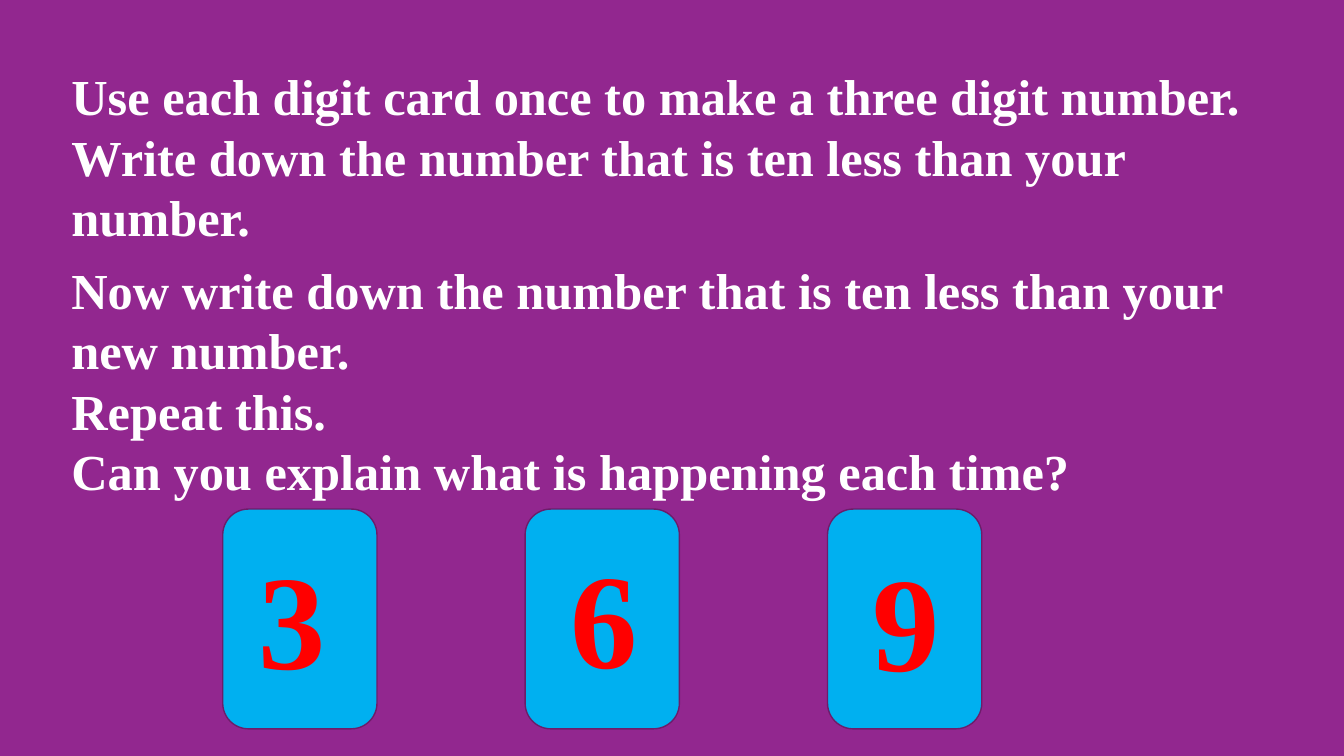
from pptx import Presentation
from pptx.dml.color import RGBColor
from pptx.enum import shapes, text
from pptx.util import Pt

COLOURS = {
    "background": "92278F",
    "instruction": "FFFFFF",
    "card": "00B0F0",
    "card_edge": "6C1D6A",
    "digit": "FF0000",
}
FONT = "Times New Roman"

INSTRUCTIONS = [
    (43.2, 138.2, [
        "Use each digit card once to make a three digit number.",
        "Write down the number that is ten less than your number.",
    ]),
    (181.4, 181.4, [
        "Now write down the number that is ten less than your new number.",
        "Repeat this.",
        "Can you explain what is happening each time?",
    ]),
]

# Digit, then left, top and width of its text
DIGITS = [
    ("3", 177.8, 378.7, 74.2),
    ("6", 400.3, 378, 59.8),
    ("9", 616.3, 380.2, 59.8),
]
FIRST_CARD_LEFT, CARD_TOP, CARD_STEP = 159.1, 363.6, 216
CARD_WIDTH, CARD_HEIGHT = 110.2, 157


def colour(name):
    return RGBColor.from_string(COLOURS[name])


def add_text(page, lines, left, top, width, height, size, colour_name, wrap=True):
    box = page.shapes.add_textbox(Pt(left), Pt(top), Pt(width), Pt(height))
    frame = box.text_frame
    frame.word_wrap = wrap
    frame.auto_size = text.MSO_AUTO_SIZE.SHAPE_TO_FIT_TEXT
    frame.text = "\n".join(lines)
    for para in frame.paragraphs:
        for span in para.runs:
            span.font.name = FONT
            span.font.size = Pt(size)
            span.font.bold = True
            span.font.color.rgb = colour(colour_name)


def add_card(page, left):
    card = page.shapes.add_shape(
        shapes.MSO_SHAPE.ROUNDED_RECTANGLE,
        Pt(left), Pt(CARD_TOP), Pt(CARD_WIDTH), Pt(CARD_HEIGHT))
    card.shadow.inherit = False
    card.fill.solid()
    card.fill.fore_color.rgb = colour("card")
    card.line.color.rgb = colour("card_edge")
    card.line.width = Pt(1)


def main():
    deck = Presentation()
    deck.slide_width, deck.slide_height = Pt(960), Pt(540)
    page = deck.slides.add_slide(deck.slide_layouts.get_by_name("Blank"))
    page.background.fill.solid()
    page.background.fill.fore_color.rgb = colour("background")

    for top, height, lines in INSTRUCTIONS:
        add_text(page, lines, 43.9, top, 883.4, height, 36, "instruction")
    for index, (digit, left, top, width) in enumerate(DIGITS):
        add_card(page, FIRST_CARD_LEFT + index * CARD_STEP)
        add_text(page, [digit], left, top, width, 123.8, 96, "digit",
                 wrap=width > 60)

    deck.save("out.pptx")


if __name__ == "__main__":
    main()
